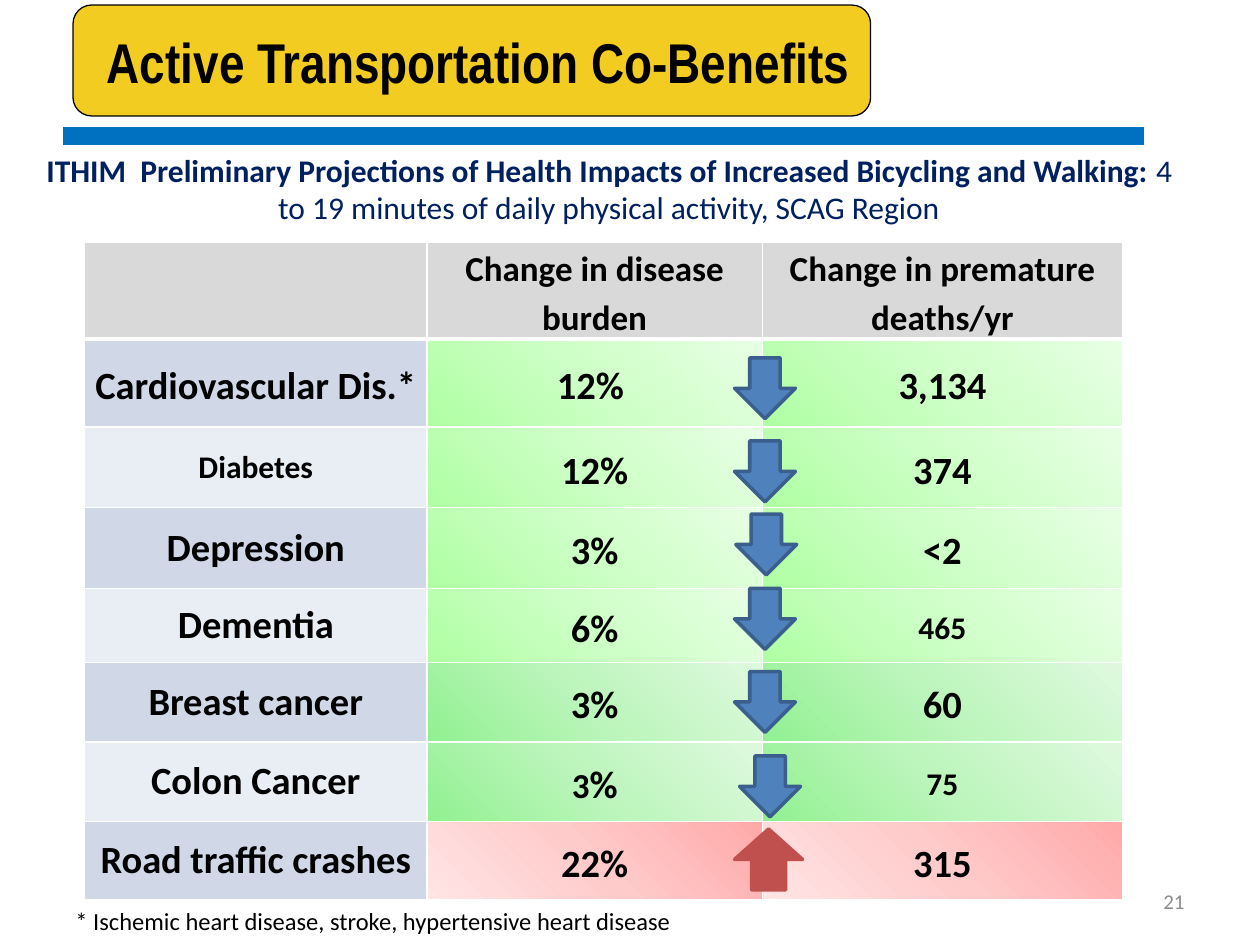
from copy import deepcopy
from lxml.etree import SubElement
from pptx import Presentation
from pptx.dml.color import RGBColor
from pptx.enum.shapes import MSO_CONNECTOR, MSO_SHAPE
from pptx.enum.text import MSO_ANCHOR, PP_ALIGN
from pptx.oxml.ns import qn
from pptx.util import Pt

BLACK = RGBColor(0x00, 0x00, 0x00)
NAVY = RGBColor(0x00, 0x20, 0x60)
GRAY = RGBColor(0x8C, 0x8C, 0x8C)
RULE_BLUE = RGBColor(0x00, 0x70, 0xC0)
GOLD = RGBColor(0xF3, 0xCC, 0x22)
HEADER_GRAY = RGBColor(0xD9, 0xD9, 0xD9)
BANDS = (RGBColor(0xD0, 0xD8, 0xE8), RGBColor(0xE9, 0xED, 0xF4))
ARROW_BLUE = RGBColor(0x4F, 0x81, 0xBD)
ARROW_EDGE = RGBColor(0x3A, 0x5F, 0x8C)
ARROW_RED = RGBColor(0xC0, 0x50, 0x4D)
LIME = (RGBColor(0xAF, 0xFF, 0xA3), RGBColor(0xCE, 0xFF, 0xC7), RGBColor(0xE7, 0xFF, 0xE4))
GREEN = (RGBColor(0x91, 0xF1, 0x91), RGBColor(0xBD, 0xF5, 0xBD), RGBColor(0xDF, 0xF9, 0xDF))
RED = (RGBColor(0xFF, 0xA9, 0xA9), RGBColor(0xFF, 0xCA, 0xCA), RGBColor(0xFF, 0xE5, 0xE5))

BANNER = "Active Transportation Co-Benefits"
SUBTITLE = (
    ("ITHIM  Preliminary Projections of Health Impacts of Increased Bicycling and Walking: ", True),
    ("4 to 19 minutes of daily physical activity, SCAG Region", False),
)
FOOTNOTE = "* Ischemic heart disease, stroke, hypertensive heart disease"
PAGE_NUMBER = "21"

HEADERS = ("", "Change in disease burden", "Change in premature deaths/yr")
IMPACTS = (
    ("Cardiovascular Dis.*", "12% ", "3,134", LIME),
    ("Diabetes", "12%", "374", LIME),
    ("Depression", "3%", "<2", LIME),
    ("Dementia", "6%", "465", LIME),
    ("Breast cancer", "3%", "60", GREEN),
    ("Colon Cancer", "3%", "75", GREEN),
    ("Road traffic crashes", "22%", "315", RED),
)
SMALL_ENTRIES = ("Diabetes", "465", "75")
COLUMN_WIDTHS = (195.84, 191.52, 205.92)
ROW_HEIGHTS = (55.44, 50.4, 46.08, 46.08, 42.48, 45.36, 45.36, 44.64)

ARROW_SIZE = 34.8
DOWN_ARROWS = ((419.76, 204.48), (419.76, 252), (420.48, 293.76),
               (419.76, 336.24), (419.76, 383.76), (422.64, 432))
UP_ARROW = (419.76, 473.76)


def style_run(run, size, color=BLACK, bold=False, font="Calibri"):
    run.font.name = font
    run.font.size = Pt(size)
    run.font.bold = bold
    run.font.color.rgb = color


def add_text(slide, box, pieces, size, color=BLACK, font="Calibri",
             align=PP_ALIGN.LEFT, anchor=MSO_ANCHOR.TOP, wrap=True):
    frame = slide.shapes.add_textbox(*map(Pt, box)).text_frame
    frame.word_wrap = wrap
    frame.vertical_anchor = anchor
    paragraph = frame.paragraphs[0]
    paragraph.alignment = align
    for text, bold in pieces:
        run = paragraph.add_run()
        run.text = text
        style_run(run, size, color, bold, font)


def add_block(slide, preset, box, fill, edge, edge_width):
    block = slide.shapes.add_shape(preset, *map(Pt, box))
    block.shadow.inherit = False
    block.fill.solid()
    block.fill.fore_color.rgb = fill
    block.line.color.rgb = edge
    block.line.width = Pt(edge_width)


def set_borders(cell, bottom_width):
    properties = cell._tc.get_or_add_tcPr()
    for side, width in (("L", 1), ("R", 1), ("T", 1), ("B", bottom_width)):
        border = SubElement(properties, qn(f"a:ln{side}"), w=str(Pt(width)))
        SubElement(SubElement(border, qn("a:solidFill")), qn("a:srgbClr"), val="FFFFFF")


def fill_solid(cell, color):
    cell.fill.solid()
    cell.fill.fore_color.rgb = color


def fill_gradient(cell, colors, angle):
    cell.fill.gradient()
    cell.fill.gradient_angle = angle
    stops = cell._tc.tcPr.find(".//" + qn("a:gsLst"))
    stops.append(deepcopy(stops[-1]))
    for stop, color, position in zip(cell.fill.gradient_stops, colors, (0, 0.5, 1)):
        stop.color.rgb = color
        stop.position = position


def write_cell(cell, text, size, spacing, before, after, anchor=MSO_ANCHOR.MIDDLE):
    cell.margin_left = cell.margin_right = Pt(5)
    cell.margin_top = cell.margin_bottom = Pt(0)
    cell.vertical_anchor = anchor
    cell.text_frame.text = text
    paragraph = cell.text_frame.paragraphs[0]
    paragraph.alignment = PP_ALIGN.CENTER
    paragraph.line_spacing = spacing
    if before:
        paragraph.space_before = Pt(before)
    paragraph.space_after = Pt(after)
    for run in paragraph.runs:
        style_run(run, size, bold=True)


def add_impact_table(slide):
    table = slide.shapes.add_table(
        len(ROW_HEIGHTS), len(COLUMN_WIDTHS), Pt(48.24), Pt(138.24),
        Pt(sum(COLUMN_WIDTHS)), Pt(sum(ROW_HEIGHTS))).table
    for column, width in zip(table.columns, COLUMN_WIDTHS):
        column.width = Pt(width)
    for row, height in zip(table.rows, ROW_HEIGHTS):
        row.height = Pt(height)

    for index, heading in enumerate(HEADERS):
        cell = table.cell(0, index)
        set_borders(cell, 3)
        fill_solid(cell, HEADER_GRAY)
        write_cell(cell, heading, 20, 1.15, 0, 10, MSO_ANCHOR.TOP)

    for row, (*entries, colors) in enumerate(IMPACTS, 1):
        for index, entry in enumerate(entries):
            cell = table.cell(row, index)
            set_borders(cell, 1)
            size = 18 if entry in SMALL_ENTRIES else 22
            if index:
                fill_gradient(cell, colors, 225 if colors is RED else 45)
                write_cell(cell, entry, size, 1.15, 0, 10)
            else:
                fill_solid(cell, BANDS[(row - 1) % 2])
                first = row == 1
                write_cell(cell, entry, size, 1.15 if first else 1, 12, 10 if first else 3)

    colon_burden = table.cell(6, 1).text_frame.paragraphs[0]
    colon_burden.runs[0].text = "3"
    style_run(colon_burden.runs[0], 20, bold=True)
    percent = colon_burden.add_run()
    percent.text = "%"
    style_run(percent, 22, bold=True)


def main():
    deck = Presentation()
    deck.slide_width, deck.slide_height = Pt(720), Pt(540)
    slide = deck.slides.add_slide(deck.slide_layouts[6])

    add_text(slide, (18, 77.76, 660.24, 59.76), SUBTITLE, 18, NAVY,
             align=PP_ALIGN.CENTER, anchor=MSO_ANCHOR.MIDDLE)

    rule = slide.shapes.add_connector(
        MSO_CONNECTOR.STRAIGHT, Pt(36), Pt(77.76), Pt(653.76), Pt(77.76))
    rule.line.color.rgb = RULE_BLUE
    rule.line.width = Pt(10)
    SubElement(rule._element.spPr, qn("a:effectLst"))

    add_text(slide, (516.24, 500.4, 167.76, 28.8), [(PAGE_NUMBER, False)], 12, GRAY,
             align=PP_ALIGN.RIGHT, anchor=MSO_ANCHOR.MIDDLE)
    add_impact_table(slide)

    for left, top in DOWN_ARROWS:
        add_block(slide, MSO_SHAPE.DOWN_ARROW, (left, top, ARROW_SIZE, ARROW_SIZE),
                  ARROW_BLUE, ARROW_EDGE, 2)
    add_block(slide, MSO_SHAPE.UP_ARROW, (*UP_ARROW, 38.88, ARROW_SIZE),
              ARROW_RED, ARROW_RED, 2)

    add_text(slide, (36, 514.08, 358.56, 24.48), [(FOOTNOTE, False)], 14, wrap=False)
    add_block(slide, MSO_SHAPE.ROUNDED_RECTANGLE, (41.76, 2.88, 455.76, 63.36),
              GOLD, BLACK, 0.75)
    add_text(slide, (54, 12.24, 576, 46.08), [(BANNER, True)], 32, font="Arial Narrow")

    deck.save("out.pptx")


if __name__ == "__main__":
    main()
